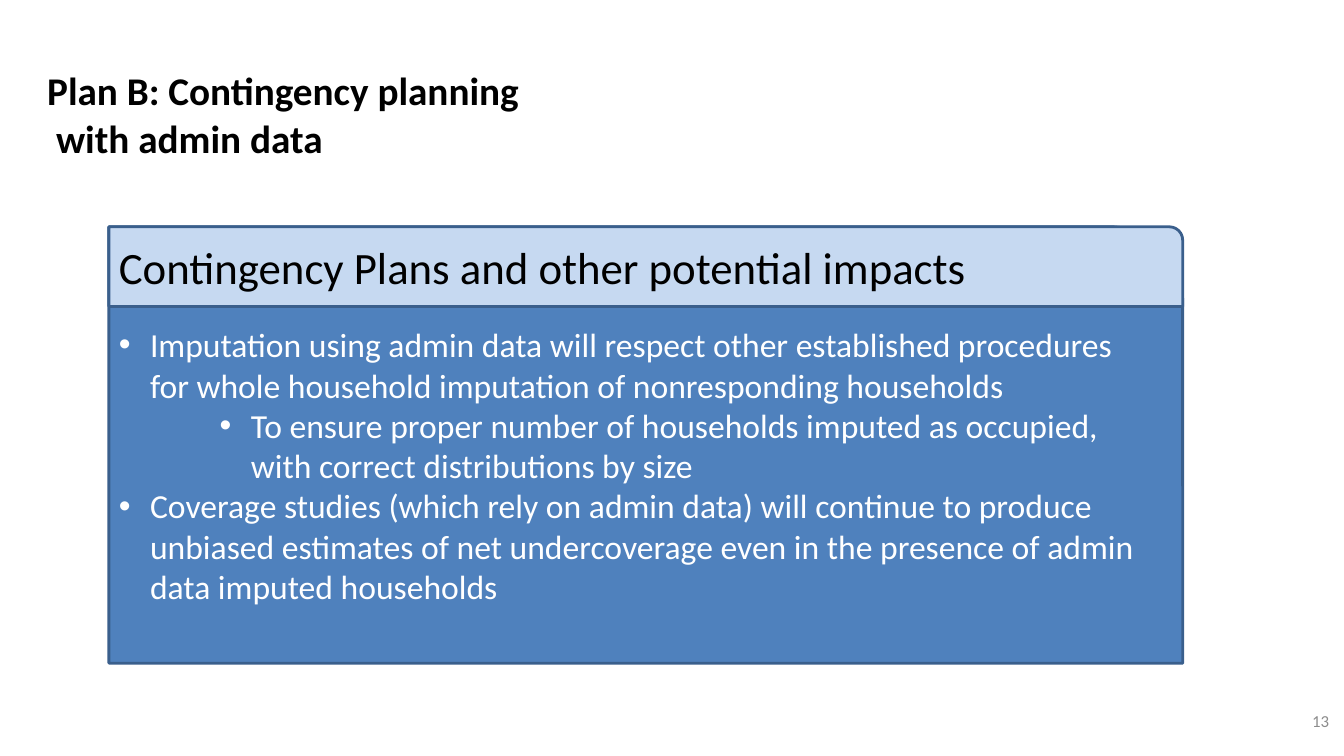
from lxml.etree import SubElement
from pptx import Presentation
from pptx.dml.color import RGBColor
from pptx.enum.shapes import MSO_SHAPE
from pptx.enum.text import MSO_ANCHOR, PP_ALIGN
from pptx.oxml.ns import qn
from pptx.util import Inches, Pt

BLACK = RGBColor(0x00, 0x00, 0x00)
WHITE = RGBColor(0xFF, 0xFF, 0xFF)
GREY = RGBColor(0x8C, 0x8C, 0x8C)
BLUE = RGBColor(0x4F, 0x81, 0xBD)
PALE_BLUE = RGBColor(0xC6, 0xD9, 0xF1)
DARK_BLUE = RGBColor(0x3A, 0x5F, 0x8C)

PANEL_LEFT, PANEL_TOP, PANEL_WIDTH = 1.08, 2.25, 10.65
PANEL_HEIGHT, HEADER_HEIGHT = 4.33, 0.79

# Level and text of each bullet
BULLETS = [
    (0, "Imputation using admin data will respect other established procedures "
        "for whole household imputation of nonresponding households"),
    (2, "To ensure proper number of households imputed as occupied, "
        "with correct distributions by size"),
    (0, "Coverage studies (which rely on admin data) will continue to produce "
        "unbiased estimates of net undercoverage even in the presence of admin "
        "data imputed households"),
]


class SlideBuilder:
    font_name = "Calibri"
    bullet_indent = 0.31
    level_step = 0.5

    def __init__(self, slide):
        self.slide = slide

    def add_lines(self, paragraph, lines, size, color, bold=False):
        for index, line in enumerate(lines):
            if index:
                paragraph.add_line_break()
            run = paragraph.add_run()
            run.text = line
            run.font.name = self.font_name
            run.font.size = Pt(size)
            run.font.bold = bold
            run.font.color.rgb = color

    def prepare_frame(self, shape):
        frame = shape.text_frame
        frame.word_wrap = True
        frame.vertical_anchor = MSO_ANCHOR.MIDDLE
        return frame

    def add_text(self, left, top, width, height, lines, size, color,
                 bold=False, align=PP_ALIGN.LEFT):
        box = self.slide.shapes.add_textbox(
            Inches(left), Inches(top), Inches(width), Inches(height))
        paragraph = self.prepare_frame(box).paragraphs[0]
        paragraph.alignment = align
        self.add_lines(paragraph, lines, size, color, bold)

    def add_panel(self, height, fill):
        shape = self.slide.shapes.add_shape(
            MSO_SHAPE.ROUND_1_RECTANGLE, Inches(PANEL_LEFT), Inches(PANEL_TOP),
            Inches(PANEL_WIDTH), Inches(height))
        shape.shadow.inherit = False
        shape.fill.solid()
        shape.fill.fore_color.rgb = fill
        shape.line.color.rgb = DARK_BLUE
        shape.line.width = Pt(2)
        return self.prepare_frame(shape)

    def add_header(self, text):
        paragraph = self.add_panel(HEADER_HEIGHT, PALE_BLUE).paragraphs[0]
        paragraph.alignment = PP_ALIGN.LEFT
        self.add_lines(paragraph, [text], 32, BLACK)

    def add_bullet_panel(self, bullets):
        frame = self.add_panel(PANEL_HEIGHT, BLUE)
        frame.margin_top = Inches(0.45)
        for index, (level, text) in enumerate(bullets):
            paragraph = frame.add_paragraph() if index else frame.paragraphs[0]
            paragraph.alignment = PP_ALIGN.LEFT
            paragraph.level = level
            properties = paragraph._p.get_or_add_pPr()
            margin = self.bullet_indent + level * self.level_step
            properties.set("marL", str(Inches(margin)))
            properties.set("indent", str(-Inches(self.bullet_indent)))
            SubElement(properties, qn("a:buFont"), typeface="Arial")
            SubElement(properties, qn("a:buChar"), char="•")
            self.add_lines(paragraph, [text], 24, WHITE)


def main():
    presentation = Presentation()
    presentation.slide_width = Inches(13.33)
    presentation.slide_height = Inches(7.5)
    builder = SlideBuilder(
        presentation.slides.add_slide(presentation.slide_layouts[6]))

    # Title and slide number
    builder.add_text(0.37, 0.48, 5.59, 1.3,
                     ["Plan B: Contingency planning", " with admin data"],
                     28, BLACK, bold=True)
    builder.add_text(10.17, 6.95, 3.11, 0.4, ["13"], 12, GREY,
                     align=PP_ALIGN.RIGHT)

    # Bullet panel with its header on top
    builder.add_bullet_panel(BULLETS)
    builder.add_header("Contingency Plans and other potential impacts")

    presentation.save("out.pptx")


if __name__ == "__main__":
    main()
